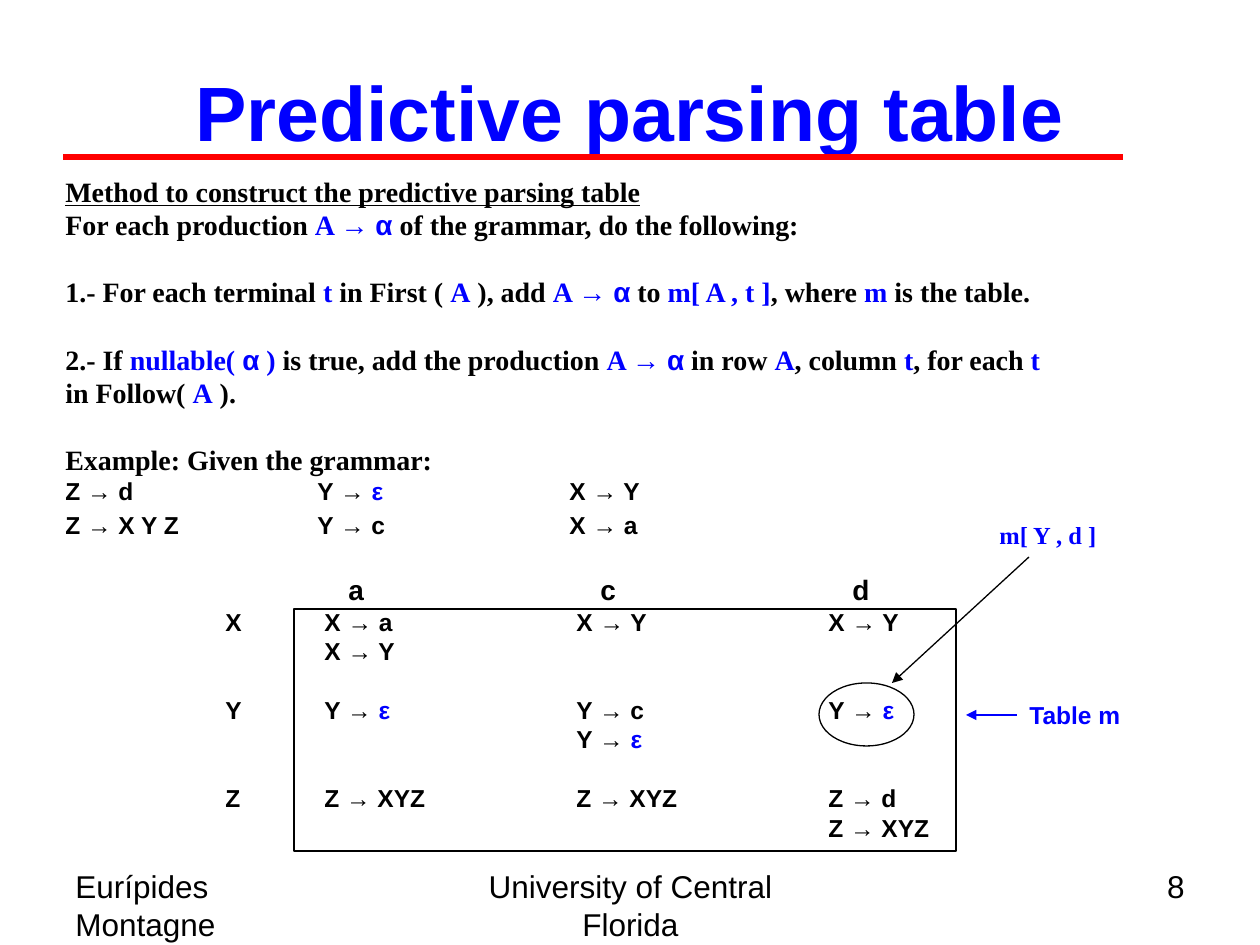
from itertools import groupby

from lxml.etree import SubElement
from pptx import Presentation
from pptx.dml.color import RGBColor
from pptx.enum.shapes import MSO_CONNECTOR as Link, MSO_SHAPE as Preset
from pptx.enum.text import MSO_ANCHOR as Anchor, PP_ALIGN as Align
from pptx.oxml.ns import qn
from pptx.util import Emu, Pt

BLUE, BLACK, RED = "0000FF", "000000", "FF0000"
SERIF, SANS = "Times New Roman", "Arial"
LINE_PITCH = 1.2

TITLE = "Predictive parsing table"
HEADING = "Method to construct the predictive parsing table"
METHOD = [
    ("For each production *A → α* of the grammar, do the following:", 0),
    ("1.- For each terminal *t* in First ( *A* ), add *A → α* to *m[ A , t ]*, "
     "where *m* is the table.", 1),
    ("2.- If *nullable( α )* is true, add the production *A → α* in row *A*, "
     "column *t*, for each *t* in Follow( *A* ).", 1),
    ("Example: Given the grammar:", 1),
]
GRAMMAR = [
    ("Z → d\tY → *ε*\tX → Y", 14),
    ("Z → X Y Z\tY → c\tX → a", 16),
]
TABLE_HEADER = "\ta\tc\td"
TABLE_ROWS = [
    ("\tX\tX → a\tX → Y\tX → Y", 0),
    ("\t\tX → Y", 0),
    ("\tY\tY → *ε*\tY → c\tY → *ε*", 1),
    ("\t\t\tY → *ε*", 0),
    ("\tZ\tZ → XYZ\tZ → XYZ\tZ → d", 1),
    ("\t\t\t\tZ → XYZ", 0),
]
FOOTERS = [
    ("Eurípides Montagne", 63, 294, Align.LEFT),
    ("University of Central Florida", 431, 399, Align.CENTER),
    ("8", 903, 294, Align.RIGHT),
]

GRAMMAR_STOPS = (252, 504)
HEADER_STOPS = (283, 535, 787)
ROW_STOPS = (160, 259, 511, 763)


def px(length):
    return Emu(round(length * 914400 / 126))


def color(code):
    return RGBColor.from_string(code)


def write(paragraph, text, size=16, font=SANS, ink=BLACK, bold=True, underline=False,
          align=Align.LEFT, gap=0, pitch=None, stops=()):
    paragraph.alignment = align
    paragraph.line_spacing = Pt(round((pitch or size) * LINE_PITCH, 1))
    paragraph.space_before = Pt(round(gap * size * LINE_PITCH, 1))
    if stops:
        tabs = SubElement(paragraph._p.get_or_add_pPr(), qn("a:tabLst"))
        for stop in stops:
            SubElement(tabs, qn("a:tab"), pos=str(px(stop)), algn="l")
    for index, part in enumerate(text.split("*")):
        for is_alpha, letters in groupby(part, key=lambda letter: letter == "α"):
            run = paragraph.add_run()
            run.text = "".join(letters)
            run.font.name = SANS if is_alpha else font
            run.font.size = Pt(size)
            run.font.bold = bold
            run.font.underline = underline
            run.font.color.rgb = color(BLUE if index % 2 else ink)


def add_box(slide, left, top, width, height, wrap=True):
    box = slide.shapes.add_textbox(px(left), px(top), px(width), px(height))
    box.text_frame.word_wrap = wrap
    return box


def add_outline(slide, preset, left, top, width, height):
    outline = slide.shapes.add_shape(preset, px(left), px(top), px(width), px(height))
    outline.shadow.inherit = False
    outline.fill.background()
    outline.line.color.rgb = color(BLACK)
    outline.line.width = Pt(0.75)


def add_line(slide, start, end, ink, weight=0.75, arrow=False):
    line = slide.shapes.add_connector(Link.STRAIGHT, *map(px, start + end))
    line.line.color.rgb = color(ink)
    line.line.width = Pt(weight)
    if arrow:
        SubElement(line.line._get_or_add_ln(), qn("a:tailEnd"), type="triangle")
    SubElement(line._element.spPr, qn("a:effectLst"))
    return line


def fill_body(frame):
    write(frame.paragraphs[0], HEADING, font=SERIF, underline=True)
    for text, gap in METHOD:
        write(frame.add_paragraph(), text, font=SERIF, gap=gap)
    for text, pitch in GRAMMAR:
        write(frame.add_paragraph(), text, size=14, pitch=pitch, stops=GRAMMAR_STOPS)
    write(frame.add_paragraph(), TABLE_HEADER, gap=1, stops=HEADER_STOPS)
    for text, gap in TABLE_ROWS:
        write(frame.add_paragraph(), text, size=14, gap=gap, stops=ROW_STOPS)


def main():
    deck = Presentation()
    deck.slide_width, deck.slide_height = px(1260), px(945)
    slide = deck.slides.add_slide(deck.slide_layouts[5])

    for text, left, width, align in FOOTERS:
        footer = add_box(slide, left, 861, width, 66)
        write(footer.text_frame.paragraphs[0], text, size=18, bold=False, align=align)

    title = slide.shapes.title
    title.left, title.top, title.width, title.height = map(px, (63, 32, 1134, 157))
    title.text_frame.vertical_anchor = Anchor.MIDDLE
    write(title.text_frame.paragraphs[0], TITLE, size=44, ink=BLUE, align=Align.CENTER)
    add_line(slide, (63, 157), (1123, 157), RED, weight=3)

    fill_body(add_box(slide, 53, 168, 1029, 680).text_frame)
    add_outline(slide, Preset.RECTANGLE, 294, 609, 662, 242)
    add_outline(slide, Preset.OVAL, 819, 683, 95, 63)

    add_line(slide, (1029, 557), (892, 683), BLACK, arrow=True)
    entry_label = add_box(slide, 987, 514, 123, 42, wrap=False)
    write(entry_label.text_frame.paragraphs[0], "m[ Y , d ]", size=14, font=SERIF, ink=BLUE)
    table_label = add_box(slide, 1017, 694, 117, 42, wrap=False)
    write(table_label.text_frame.paragraphs[0], "Table m", size=14, ink=BLUE)
    pointer = add_line(slide, (1017, 715), (966, 715), BLUE, arrow=True)
    pointer.begin_connect(table_label, 1)

    deck.save("out.pptx")


if __name__ == "__main__":
    main()
